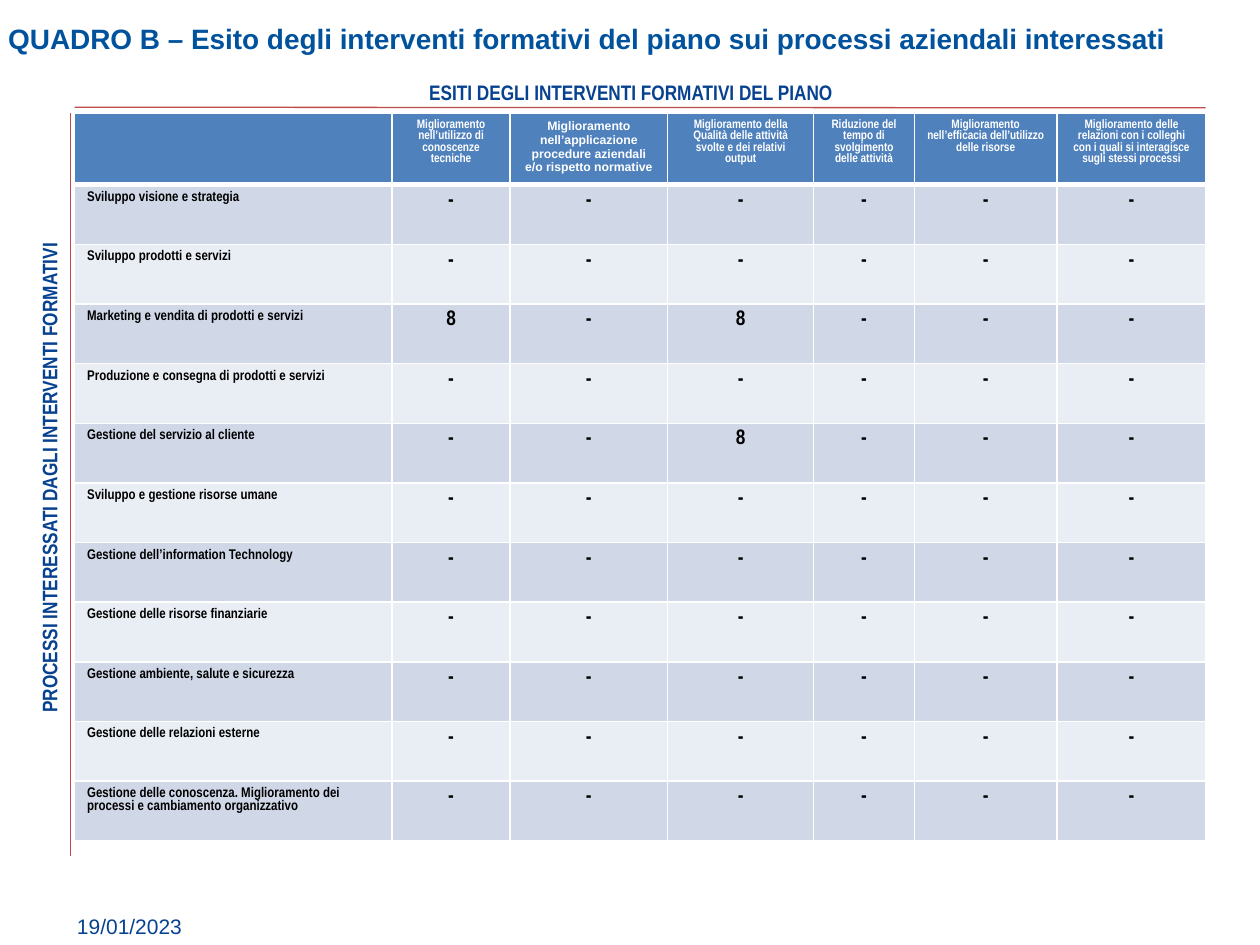
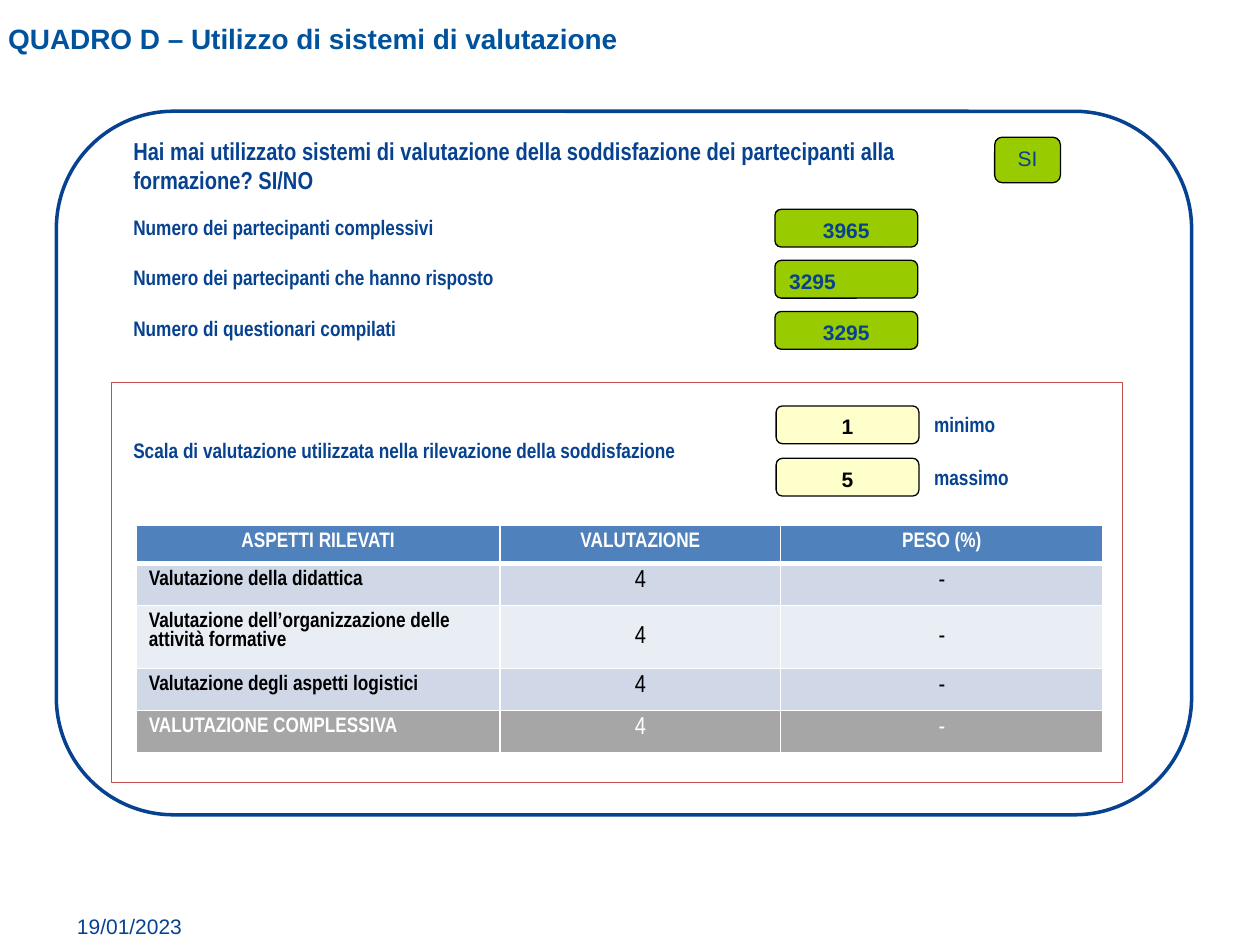
"""Build the two evaluation slides: training outcomes table and assessment systems panel."""
from dataclasses import dataclass
from typing import Optional

from lxml import etree
from pptx import Presentation
from pptx.dml.color import RGBColor
from pptx.enum.shapes import MSO_CONNECTOR, MSO_SHAPE
from pptx.enum.text import MSO_ANCHOR, PP_ALIGN
from pptx.oxml.ns import qn
from pptx.util import Pt

LEFT, CENTER = PP_ALIGN.LEFT, PP_ALIGN.CENTER
TOP, MIDDLE = MSO_ANCHOR.TOP, MSO_ANCHOR.MIDDLE
RECTANGLE, ROUNDED = MSO_SHAPE.RECTANGLE, MSO_SHAPE.ROUNDED_RECTANGLE
STRAIGHT = MSO_CONNECTOR.STRAIGHT

SANS, NARROW = "Arial", "Arial Narrow"
NAVY, TITLE_BLUE, BLACK, WHITE = "074290", "00529C", "000000", "FFFFFF"
HEADER_BLUE, BAND_DARK, BAND_LIGHT, TOTAL_GRAY = "4F81BD", "D0D8E8", "E9EDF4", "A6A6A6"
RULE_RED, PANEL_RED, GREEN, CREAM = "BF4C48", "C0504D", "99CC00", "FFFFCC"
LINE_HEIGHT = 21.6


@dataclass(frozen=True)
class Style:
    """Character and paragraph look of a text."""
    size: float = 12
    font: str = NARROW
    color: str = NAVY
    bold: bool = True
    align: PP_ALIGN = LEFT
    line_points: Optional[float] = None


@dataclass(frozen=True)
class Box:
    """Place of an element in points."""
    left: float
    top: float
    width: float
    height: float = LINE_HEIGHT

    def lengths(self) -> tuple:
        """Return the four lengths for python-pptx."""
        return Pt(self.left), Pt(self.top), Pt(self.width), Pt(self.height)


@dataclass(frozen=True)
class Label:
    """A text box with its text."""
    text: str
    box: Box
    style: Style = Style()
    rotation: float = 0
    wrap: bool = True


@dataclass(frozen=True)
class Panel:
    """A preset shape, with text if it has any."""
    box: Box
    kind: MSO_SHAPE = ROUNDED
    fill: Optional[str] = GREEN
    line: str = BLACK
    line_width: float = 0.75
    text: str = ""
    style: Style = Style(font=SANS, align=CENTER)


@dataclass(frozen=True)
class Cell:
    """A table cell."""
    text: str
    style: Style
    fill: str
    anchor: MSO_ANCHOR = TOP


TITLE = Style(16, SANS, TITLE_BLUE, line_points=36)
DATE = Style(font=SANS, bold=False)
AXIS = Style(align=CENTER)
SCALE_VALUE = Style(font=SANS, color=BLACK, align=CENTER)

OUTCOMES = [
    "Miglioramento nell’utilizzo di conoscenze tecniche",
    "Miglioramento nell’applicazione procedure aziendali e/o rispetto normative",
    "Miglioramento della Qualità delle attività svolte e dei relativi output",
    "Riduzione del tempo di svolgimento delle attività",
    "Miglioramento nell’efficacia dell’utilizzo delle risorse",
    "Miglioramento delle relazioni con i colleghi con i quali si interagisce sugli stessi processi",
]
SANS_OUTCOME = 1
PROCESSES = [
    "Sviluppo visione e strategia",
    "Sviluppo prodotti e servizi",
    "Marketing e vendita di prodotti e servizi",
    "Produzione e consegna di prodotti e servizi",
    "Gestione del servizio al cliente",
    "Sviluppo e gestione risorse umane",
    "Gestione dell’information Technology",
    "Gestione delle risorse finanziarie",
    "Gestione ambiente, salute e sicurezza",
    "Gestione delle relazioni esterne",
    "Gestione delle conoscenza. Miglioramento dei processi e cambiamento organizzativo",
]
SCORES = {(2, 0): "8", (2, 2): "8", (4, 2): "8"}
ASPECTS = [
    "Valutazione della didattica",
    "Valutazione dell’organizzazione delle attività formative",
    "Valutazione degli aspetti logistici",
    "VALUTAZIONE COMPLESSIVA",
]


def color(value: str) -> RGBColor:
    """Turn a hex string into a colour."""
    return RGBColor.from_string(value)


def write(frame, text: str, style: Style) -> None:
    """Write one styled paragraph into a text frame."""
    paragraph = frame.paragraphs[0]
    paragraph.alignment = style.align
    if style.line_points:
        paragraph.line_spacing = Pt(style.line_points)
    run = paragraph.add_run()
    run.text = text
    run.font.size = Pt(style.size)
    run.font.name = style.font
    run.font.bold = style.bold
    run.font.color.rgb = color(style.color)


def add_label(slide, label: Label) -> None:
    """Draw a text box."""
    shape = slide.shapes.add_textbox(*label.box.lengths())
    shape.rotation = label.rotation
    shape.text_frame.word_wrap = label.wrap
    write(shape.text_frame, label.text, label.style)


def add_panel(slide, panel: Panel) -> None:
    """Draw a preset shape."""
    shape = slide.shapes.add_shape(panel.kind, *panel.box.lengths())
    shape.shadow.inherit = False
    if panel.fill:
        shape.fill.solid()
        shape.fill.fore_color.rgb = color(panel.fill)
    else:
        shape.fill.background()
    shape.line.color.rgb = color(panel.line)
    shape.line.width = Pt(panel.line_width)
    if panel.text:
        shape.text_frame.vertical_anchor = TOP
        write(shape.text_frame, panel.text, panel.style)


def add_rule(slide, start: tuple[float, float], end: tuple[float, float]) -> None:
    """Draw a thin red line."""
    connector = slide.shapes.add_connector(STRAIGHT, *map(Pt, start + end))
    connector.line.color.rgb = color(RULE_RED)
    connector.line.width = Pt(0.75)
    etree.SubElement(connector._element.spPr, qn("a:effectLst"))


def add_borders(cell, top: float, bottom: float) -> None:
    """Give a cell white borders."""
    properties = cell._tc.get_or_add_tcPr()
    for side, width in (("L", 1), ("R", 1), ("T", top), ("B", bottom)):
        line = etree.SubElement(properties, qn(f"a:ln{side}"), w=str(int(Pt(width))))
        fill = etree.SubElement(line, qn("a:solidFill"))
        etree.SubElement(fill, qn("a:srgbClr"), val=WHITE)


def add_grid(slide, left: float, top: float, widths: list[float],
             heights: list[float], rows: list[list[Cell]]) -> None:
    """Draw a table whose header has a thick lower border."""
    box = Box(left, top, sum(widths), sum(heights))
    table = slide.shapes.add_table(len(heights), len(widths), *box.lengths()).table
    for column, width in zip(table.columns, widths):
        column.width = Pt(width)
    for index, (row, height, cells) in enumerate(zip(table.rows, heights, rows)):
        row.height = Pt(height)
        for cell, content in zip(row.cells, cells):
            add_borders(cell, 3 if index == 1 else 1, 3 if index == 0 else 1)
            cell.fill.solid()
            cell.fill.fore_color.rgb = color(content.fill)
            cell.vertical_anchor = content.anchor
            if content.text:
                write(cell.text_frame, content.text, content.style)


def cell_style(size: float, text_color: str = BLACK, bold: bool = True,
               align: PP_ALIGN = CENTER) -> Style:
    """Return the narrow style used in table cells."""
    return Style(size, NARROW, text_color, bold, align)


def band(index: int) -> str:
    """Return the alternating fill of a body row."""
    return BAND_LIGHT if index % 2 else BAND_DARK


def add_page(presentation, title: str):
    """Add a slide with its title and date."""
    slide = presentation.slides.add_slide(presentation.slide_layouts[6])
    add_label(slide, Label("19/01/2023", Box(36.9, 518.4, 75.6), DATE, wrap=False))
    add_label(slide, Label(title, Box(-2.4, -7.9, 680, 51), TITLE))
    return slide


def build_outcomes(presentation) -> None:
    """Build the table of outcomes by company process."""
    slide = add_page(presentation, "QUADRO B – Esito degli interventi formativi del piano "
                                   "sui processi aziendali interessati")
    sans_header = Style(7, SANS, WHITE, align=CENTER)
    header = [Cell("", sans_header, HEADER_BLUE)]
    header += [Cell(text, sans_header if index == SANS_OUTCOME else cell_style(7, WHITE),
                    HEADER_BLUE) for index, text in enumerate(OUTCOMES)]
    rows = [header]
    for index, process in enumerate(PROCESSES):
        scores = [Cell(SCORES.get((index, column), "-"), cell_style(12), band(index))
                  for column in range(len(OUTCOMES))]
        rows.append([Cell(process, cell_style(8, align=LEFT), band(index))] + scores)
    add_grid(slide, 42.6, 64.8, [181.4, 67.5, 90, 83.5, 57.5, 81.5, 85.2],
             [40.5] + [34.1] * len(PROCESSES), rows)
    add_rule(slide, (42.6, 61.3), (689, 61.6))
    add_rule(slide, (40.5, 64.8), (40.5, 489))
    add_label(slide, Label("ESITI DEGLI INTERVENTI FORMATIVI DEL PIANO",
                           Box(178.5, 41.8, 364.3), AXIS))
    add_label(slide, Label("PROCESSI INTERESSATI DAGLI INTERVENTI FORMATIVI",
                           Box(-154, 262.3, 364.3), AXIS, rotation=270))


def build_assessment(presentation) -> None:
    """Build the panel about assessment systems."""
    slide = add_page(presentation, "QUADRO D – Utilizzo di sistemi di valutazione")
    add_panel(slide, Panel(Box(63.8, 218.2, 577.5, 229), RECTANGLE, WHITE, PANEL_RED, 0.25))
    add_panel(slide, Panel(Box(32.2, 63.6, 648.7, 402), fill=None, line=NAVY, line_width=2))

    add_label(slide, Label("Hai mai utilizzato sistemi di valutazione della soddisfazione "
                           "dei partecipanti alla formazione? SI/NO",
                           Box(69.1, 74, 499.7, 41), Style(14)))
    add_panel(slide, Panel(Box(568.4, 78.4, 37.6, 26), text="SI",
                           style=Style(font=SANS, bold=False, align=CENTER)))

    counts = [("Numero dei partecipanti complessivi", "3965", CENTER),
              ("Numero dei partecipanti che hanno risposto", "3295", LEFT),
              ("Numero di questionari compilati", "3295", CENTER)]
    for index, (text, value, align) in enumerate(counts):
        add_label(slide, Label(text, Box(69.1, 118.8 + 28.9 * index, 262.8)))
        add_panel(slide, Panel(Box(442.8, 119.6 + 29.2 * index, 81.6), text=value,
                               style=Style(font=SANS, align=align)))

    add_label(slide, Label("Scala di valutazione utilizzata nella rilevazione della soddisfazione",
                           Box(69.1, 246.5, 328.3)))
    for index, (value, text) in enumerate([("1", "minimo"), ("5", "massimo")]):
        top = 232 + 29.9 * index
        add_panel(slide, Panel(Box(443.5, top, 81.6), fill=CREAM, text=value, style=SCALE_VALUE))
        add_label(slide, Label(text, Box(526.7, top - 0.2, 66)))

    rows = [[Cell(text, cell_style(12, WHITE), HEADER_BLUE)
             for text in ("ASPETTI RILEVATI", "VALUTAZIONE", "PESO (%)")]]
    for index, aspect in enumerate(ASPECTS):
        is_total = index == len(ASPECTS) - 1
        fill = TOTAL_GRAY if is_total else band(index)
        text_color = WHITE if is_total else BLACK
        anchor = MIDDLE if index == 1 else TOP
        rows.append([Cell(aspect, cell_style(12, text_color, align=LEFT), fill)]
                    + [Cell(value, cell_style(14, text_color, False), fill, anchor)
                       for value in ("4", "-")])
    add_grid(slide, 77.8, 300.3, [208, 160.3, 184.2], [21.6, 24, 36, 24, 24], rows)


def main() -> None:
    """Build and save the presentation."""
    presentation = Presentation()
    presentation.slide_width, presentation.slide_height = Pt(720), Pt(540)
    build_outcomes(presentation)
    build_assessment(presentation)
    presentation.save("out.pptx")


if __name__ == "__main__":
    main()
